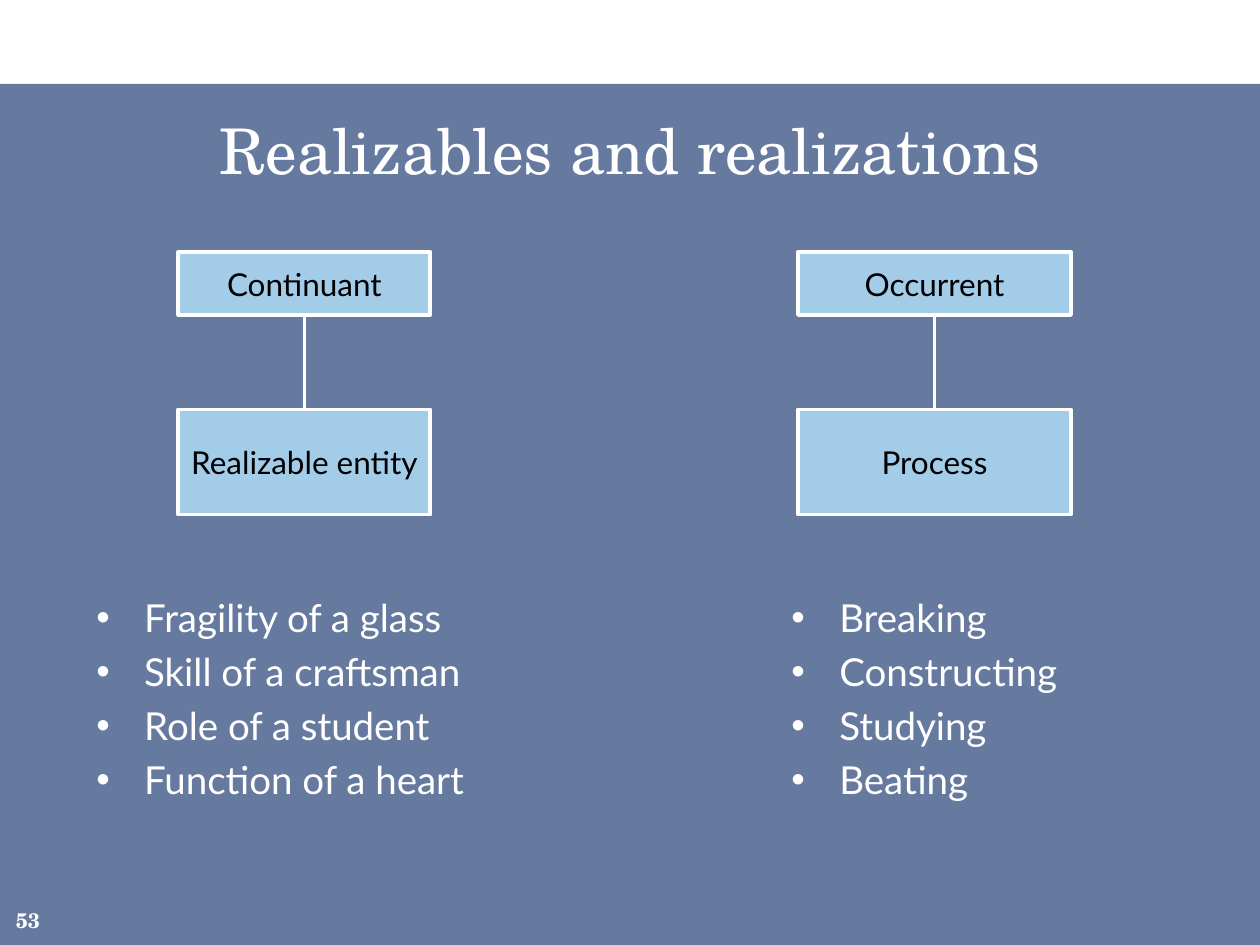
from lxml import etree
from pptx import Presentation
from pptx.dml.color import RGBColor
from pptx.enum.shapes import MSO_CONNECTOR, MSO_SHAPE
from pptx.enum.text import MSO_ANCHOR, PP_ALIGN
from pptx.oxml.ns import qn
from pptx.util import Inches, Pt

RECTANGLE = MSO_SHAPE.RECTANGLE
STRAIGHT = MSO_CONNECTOR.STRAIGHT
LEFT, CENTER, RIGHT = PP_ALIGN.LEFT, PP_ALIGN.CENTER, PP_ALIGN.RIGHT
TOP, MIDDLE = MSO_ANCHOR.TOP, MSO_ANCHOR.MIDDLE
BOTTOM_SIDE, TOP_SIDE = 2, 0

WHITE, BLACK, NAVY, SKY = "FFFFFF", "000000", "002060", "A2CCE8"
SERIF, SANS = "TeX Gyre Schola", "Lato"
COLUMNS, ROWS = 120, 90


def color(value):
    return RGBColor.from_string(value)


class Page:
    """Draws on one slide; lengths are cells of a 120 by 90 grid."""

    line_width = Pt(2.25)
    bullet_indent = Inches(0.38)

    def __init__(self, deck):
        self.slide = deck.slides.add_slide(deck.slide_layouts[6])
        self.cell_width = deck.slide_width / COLUMNS
        self.cell_height = deck.slide_height / ROWS

    def place(self, left, top, width, height):
        return (round(left * self.cell_width), round(top * self.cell_height),
                round(width * self.cell_width), round(height * self.cell_height))

    def fill_para(self, para, words, size, font, ink, align=LEFT, bold=False):
        para.text = words
        para.alignment = align
        para.font.size = Pt(size)
        para.font.name = font
        para.font.bold = bold
        para.font.color.rgb = color(ink)

    def panel(self, area, fill, opacity):
        shape = self.slide.shapes.add_shape(RECTANGLE, *self.place(*area))
        shape.shadow.inherit = False
        shape.fill.solid()
        shape.fill.fore_color.rgb = color(fill)
        shape.line.fill.background()
        tint = shape._element.spPr.find(qn("a:solidFill")).find(qn("a:srgbClr"))
        etree.SubElement(tint, qn("a:alpha"), val=str(opacity * 1000))

    def frame(self, area, anchor=TOP):
        box = self.slide.shapes.add_textbox(*self.place(*area))
        box.text_frame.word_wrap = True
        box.text_frame.vertical_anchor = anchor
        return box.text_frame

    def text(self, area, words, size, align, anchor=TOP, bold=False):
        para = self.frame(area, anchor).paragraphs[0]
        self.fill_para(para, words, size, SERIF, WHITE, align, bold)

    def bullets(self, area, items, size=22):
        frame = self.frame(area)
        for index, item in enumerate(items):
            para = frame.add_paragraph() if index else frame.paragraphs[0]
            if index:
                para.space_before = Pt(size * 0.2)
            properties = para._p.get_or_add_pPr()
            properties.set("marL", str(self.bullet_indent))
            properties.set("indent", str(-self.bullet_indent))
            tint = etree.SubElement(properties, qn("a:buClr"))
            etree.SubElement(tint, qn("a:srgbClr"), val=WHITE)
            etree.SubElement(properties, qn("a:buFont"), typeface="Arial")
            etree.SubElement(properties, qn("a:buChar"), char="•")
            self.fill_para(para, item, size, SANS, WHITE)

    def node(self, area, label):
        box = self.slide.shapes.add_shape(RECTANGLE, *self.place(*area))
        box.shadow.inherit = False
        box.fill.solid()
        box.fill.fore_color.rgb = color(SKY)
        box.line.color.rgb = color(WHITE)
        box.line.width = self.line_width
        box.text_frame.word_wrap = False
        box.text_frame.vertical_anchor = MIDDLE
        self.fill_para(box.text_frame.paragraphs[0], label, 18, SANS, BLACK, CENTER)
        return box

    def link(self, upper, lower):
        line = self.slide.shapes.add_connector(STRAIGHT, 0, 0, 0, 0)
        line.begin_connect(upper, BOTTOM_SIDE)
        line.end_connect(lower, TOP_SIDE)
        line.line.color.rgb = color(WHITE)
        line.line.width = self.line_width
        etree.SubElement(line._element.spPr, qn("a:effectLst"))

    def branch(self, left, width, parent, child):
        upper = self.node((left, 24, width, 6), parent)
        lower = self.node((left, 39, width, 10), child)
        self.link(upper, lower)


def main():
    deck = Presentation()
    deck.slide_width, deck.slide_height = Inches(10), Inches(7.5)
    page = Page(deck)
    page.panel((0, 8, COLUMNS, ROWS - 8), NAVY, 60)
    page.text((3, 10, 114, 10), "Realizables and realizations", 36, CENTER)
    page.branch(17, 24, "Continuant", "Realizable entity")
    page.branch(76, 26, "Occurrent", "Process")
    page.bullets((8, 56, 53, 28), ["Fragility of a glass", "Skill of a craftsman",
                                   "Role of a student", "Function of a heart"])
    page.bullets((74.2, 56, 32.9, 28),
                 ["Breaking", "Constructing", "Studying", "Beating"])
    page.text((-1, 85.2, 6, 4.8), "53", 12, RIGHT, MIDDLE, bold=True)
    deck.save("out.pptx")


if __name__ == "__main__":
    main()
